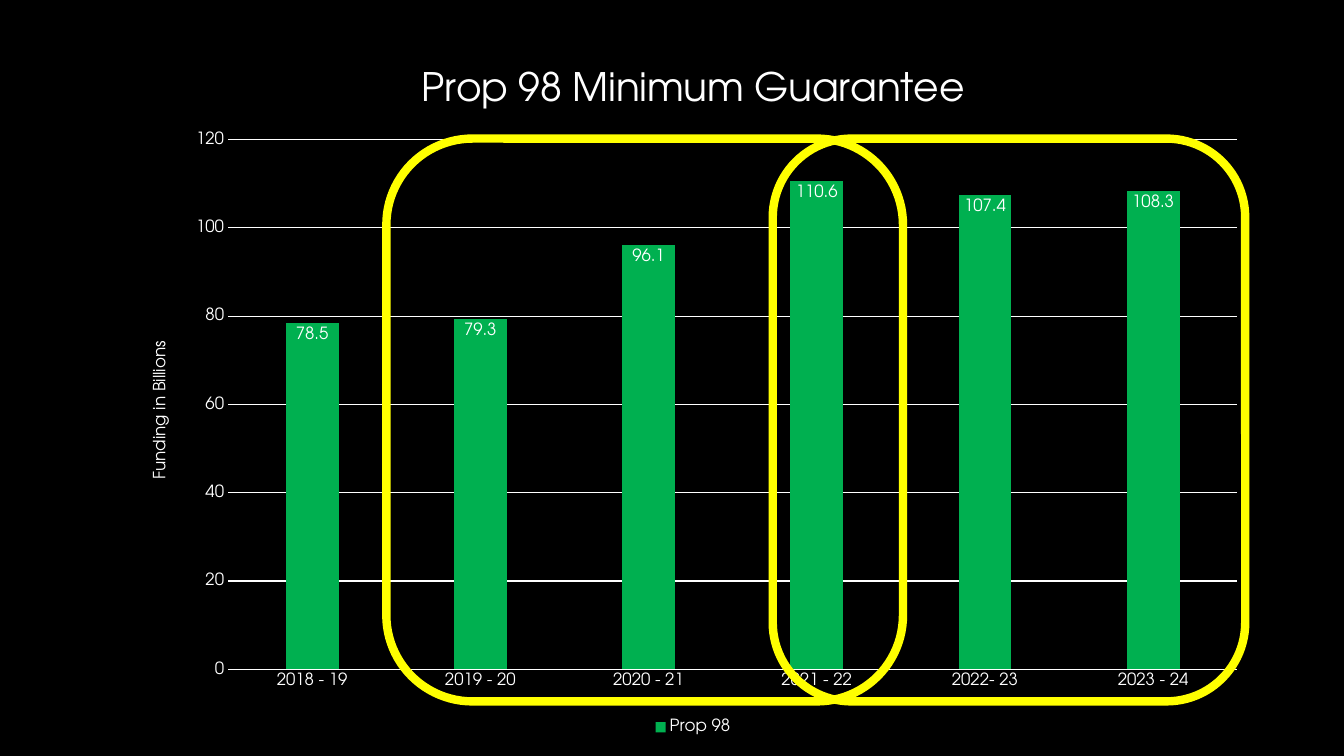
from dataclasses import dataclass

from lxml.etree import SubElement
from pptx import Presentation
from pptx.chart.data import CategoryChartData
from pptx.dml.color import RGBColor
from pptx.enum.chart import XL_CHART_TYPE as ChartType
from pptx.enum.chart import XL_LABEL_POSITION as LabelPos
from pptx.enum.chart import XL_LEGEND_POSITION as LegendPos
from pptx.enum.chart import XL_TICK_MARK as Tick
from pptx.enum.shapes import MSO_SHAPE as Shape
from pptx.oxml.ns import qn
from pptx.util import Pt


@dataclass(frozen=True)
class Theme:
    """Colours, font and type sizes of the slide."""
    back: RGBColor = RGBColor(0, 0, 0)
    ink: RGBColor = RGBColor(255, 255, 255)
    bar: RGBColor = RGBColor(0, 176, 80)
    ring: RGBColor = RGBColor(255, 255, 0)
    font: str = "TeX Gyre Adventor"
    title: int = 28
    label: int = 12


THEME = Theme()
FUNDING = {
    "2018 - 19": 78.5,
    "2019 - 20": 79.3,
    "2020 - 21": 96.1,
    "2021 - 22": 110.6,
    "2022- 23": 107.4,
    "2023 - 24": 108.3,
}


def px(n):
    """Turn pixels, 96 to the inch, into EMU."""
    return n * 9525


def set_font(font, size=THEME.label):
    """Apply the theme's typeface and ink colour."""
    font.name, font.size, font.bold = THEME.font, Pt(size), False
    font.color.rgb = THEME.ink


def set_line(line, color, width):
    """Give a line a solid colour and a width in points."""
    line.color.rgb = color
    line.width = Pt(width)


def set_title(owner, text, size):
    """Title a chart or an axis."""
    tf = owner.text_frame
    tf.text = text
    set_font(tf.paragraphs[0].font, size)


def place_plot(chart, **fractions):
    """Fix the inner plot area as fractions of the chart."""
    plot_area = chart._chartSpace.chart.plotArea
    for old in plot_area.findall(qn("c:layout")):
        plot_area.remove(old)
    layout = SubElement(plot_area, qn("c:layout"))
    plot_area.insert(0, layout)
    manual = SubElement(layout, qn("c:manualLayout"))
    settings = {"layoutTarget": "inner", "xMode": "edge", "yMode": "edge", **fractions}
    for tag, value in settings.items():
        SubElement(manual, qn(f"c:{tag}")).set("val", str(value))


def add_funding_chart(slide, x, y, w, h):
    """Draw the funding column chart in the given box."""
    data = CategoryChartData()
    data.categories = FUNDING.keys()
    data.add_series("Prop 98", FUNDING.values())
    chart = slide.shapes.add_chart(
        ChartType.COLUMN_CLUSTERED, px(x), px(y), px(w), px(h), data).chart
    set_font(chart.font)
    chart.has_title = True
    set_title(chart.chart_title, "Prop 98 Minimum Guarantee", THEME.title)
    chart.chart_title.include_in_layout = False
    chart.has_legend = True
    chart.legend.position = LegendPos.BOTTOM
    chart.legend.include_in_layout = False
    set_font(chart.legend.font)
    place_plot(chart, x=0.09, y=0.14, w=0.89, h=0.76)

    years, billions = chart.category_axis, chart.value_axis
    for axis in (years, billions):
        axis.major_tick_mark = axis.minor_tick_mark = Tick.NONE
        set_font(axis.tick_labels.font)
    set_line(years.format.line, THEME.ink, 0.75)
    billions.format.line.fill.background()
    billions.minimum_scale, billions.maximum_scale = 0, 120
    billions.major_unit = 20
    set_line(billions.major_gridlines.format.line, THEME.ink, 0.75)
    set_title(billions.axis_title, "Funding in Billions", THEME.label)

    plot = chart.plots[0]
    plot.gap_width, plot.overlap = 219, -27
    plot.vary_by_categories = False
    series = plot.series[0]
    series.invert_if_negative = False
    series.format.fill.solid()
    series.format.fill.fore_color.rgb = THEME.bar
    labels = series.data_labels
    labels.show_value = True
    labels.position = LabelPos.INSIDE_END
    set_font(labels.font)


def add_ring(slide, x, y, w, h):
    """Outline a span of years with a rounded ring."""
    s = slide.shapes.add_shape(Shape.ROUNDED_RECTANGLE, px(x), px(y), px(w), px(h))
    s.shadow.inherit = False
    s.fill.background()
    set_line(s.line, THEME.ring, 6)


def add_guarantee_slide(prs):
    """Build the slide with its chart and the two overlapping rings."""
    slide = prs.slides.add_slide(prs.slide_layouts[6])
    fill = slide.background.fill
    fill.solid()
    fill.fore_color.rgb = THEME.back
    add_funding_chart(slide, 120, 40, 1080, 664)
    for x, w in ((368, 492), (736, 450)):
        add_ring(slide, x, 132, w, 536)


def main():
    """Create and save the presentation."""
    prs = Presentation()
    prs.slide_width, prs.slide_height = px(1280), px(720)
    add_guarantee_slide(prs)
    prs.save("out.pptx")


if __name__ == "__main__":
    main()
